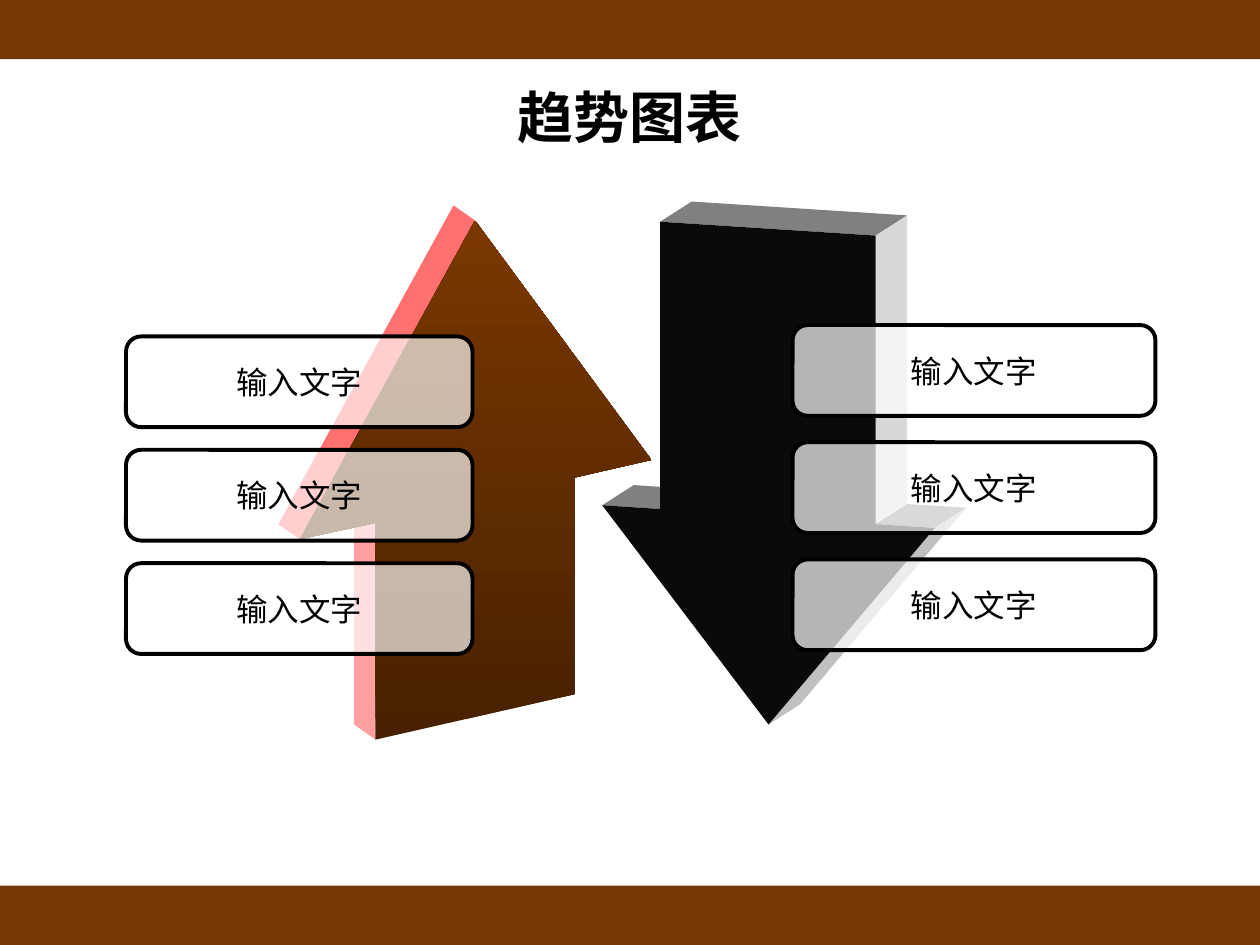
import pptx
import pptx.util
import pptx.dml.color
import pptx.enum.shapes
import pptx.enum.text
import pptx.oxml.ns
from lxml import etree

FONT = "Noto Sans CJK SC"
WIDE, HIGH, BAND = 10, 7.5, 0.47
TITLE = "趋势图表"
ARROWS = [
    {
        "front": [(3.77, 1.75), (5.17, 3.65), (4.56, 3.79), (4.56, 5.51),
                  (2.98, 5.87), (2.98, 4.15), (2.38, 4.28)],
        "depth": (-0.17, -0.12),
        "sides": {4: "FFA0A0", 6: "FF7070"},
        "fill": ("482100", "7A3800"),
    },
    {
        "front": [(5.24, 1.76), (6.95, 1.87), (6.95, 4.16), (7.42, 4.19),
                  (6.1, 5.75), (4.78, 4.01), (5.24, 4.04)],
        "depth": (0.25, -0.16),
        "sides": {0: "808080", 1: "D8D8D8", 2: "808080", 3: "C0C0C0", 5: "808080"},
        "fill": ("0A0A0A",),
    },
]
STACKS = [
    {"left": 1, "top": 2.67, "wide": 2.75, "step": 0.9, "alpha": 67,
     "words": ["输入文字", "输入文字", "输入文字"]},
    {"left": 6.29, "top": 2.58, "wide": 2.88, "step": 0.93, "alpha": 70,
     "words": ["输入文字", "输入文字", "输入文字"]},
]
TALL = 0.72

inch = pptx.util.Inches
qn = pptx.oxml.ns.qn
KIND = pptx.enum.shapes.MSO_SHAPE


def hue(code):
    return pptx.dml.color.RGBColor.from_string(code)


def paint(shape, code, alpha=100):
    shape.shadow.inherit = False
    shape.line.fill.background()
    shape.fill.solid()
    shape.fill.fore_color.rgb = hue(code)
    if alpha < 100:
        tint = shape.fill._xPr.find(qn("a:solidFill"))[0]
        etree.SubElement(tint, qn("a:alpha"), val=str(alpha * 1000))


def write(shape, text, size=18, bold=False, wrap=False):
    frame = shape.text_frame
    frame.word_wrap = wrap
    frame.vertical_anchor = pptx.enum.text.MSO_ANCHOR.MIDDLE
    para = frame.paragraphs[0]
    para.alignment = pptx.enum.text.PP_ALIGN.CENTER
    run = para.add_run()
    run.text = text
    run.font.size = pptx.util.Pt(size)
    run.font.bold = bold
    run.font.color.rgb = hue("000000")
    run.font.name = FONT
    etree.SubElement(run.font._element, qn("a:ea"), typeface=FONT)


def block(slide, kind, left, top, wide, tall, code, alpha=100):
    shape = slide.shapes.add_shape(kind, *map(inch, (left, top, wide, tall)))
    paint(shape, code, alpha)
    return shape


def face(slide, dots, code):
    spots = [(inch(x), inch(y)) for x, y in dots]
    build = slide.shapes.build_freeform(*spots[0])
    build.add_line_segments(spots[1:], close=True)
    shape = build.convert_to_shape()
    paint(shape, code)
    return shape


def arrow(slide, front, depth, sides, fill):
    back = [(x + depth[0], y + depth[1]) for x, y in front]
    for i, code in sides.items():
        j = (i + 1) % len(front)
        face(slide, [front[i], back[i], back[j], front[j]], code)
    shape = face(slide, front, fill[0])
    if len(fill) > 1:
        shape.fill.gradient()
        shape.fill.gradient_angle = 90
        for stop, code, spot in zip(shape.fill.gradient_stops, fill, (0, 1)):
            stop.color.rgb = hue(code)
            stop.position = spot


def stack(slide, left, top, wide, step, alpha, words):
    for row, text in enumerate(words):
        box = block(slide, KIND.ROUNDED_RECTANGLE, left, top + row * step,
                    wide, TALL, "FFFFFF", alpha)
        box.line.color.rgb = hue("000000")
        box.line.width = pptx.util.Pt(2.25)
        write(box, text)


def main():
    deck = pptx.Presentation()
    deck.slide_width, deck.slide_height = inch(WIDE), inch(HIGH)
    slide = deck.slides.add_slide(deck.slide_layouts[5])
    for top in (0, HIGH - BAND):
        block(slide, KIND.RECTANGLE, 0, top, WIDE, BAND, "753805")
    title = slide.shapes.title
    title.left, title.top, title.width, title.height = map(inch, (0.5, 0.3, 9, 1.25))
    write(title, TITLE, size=32, bold=True, wrap=True)
    for item in ARROWS:
        arrow(slide, **item)
    for item in STACKS:
        stack(slide, **item)
    deck.save("out.pptx")


if __name__ == "__main__":
    main()
